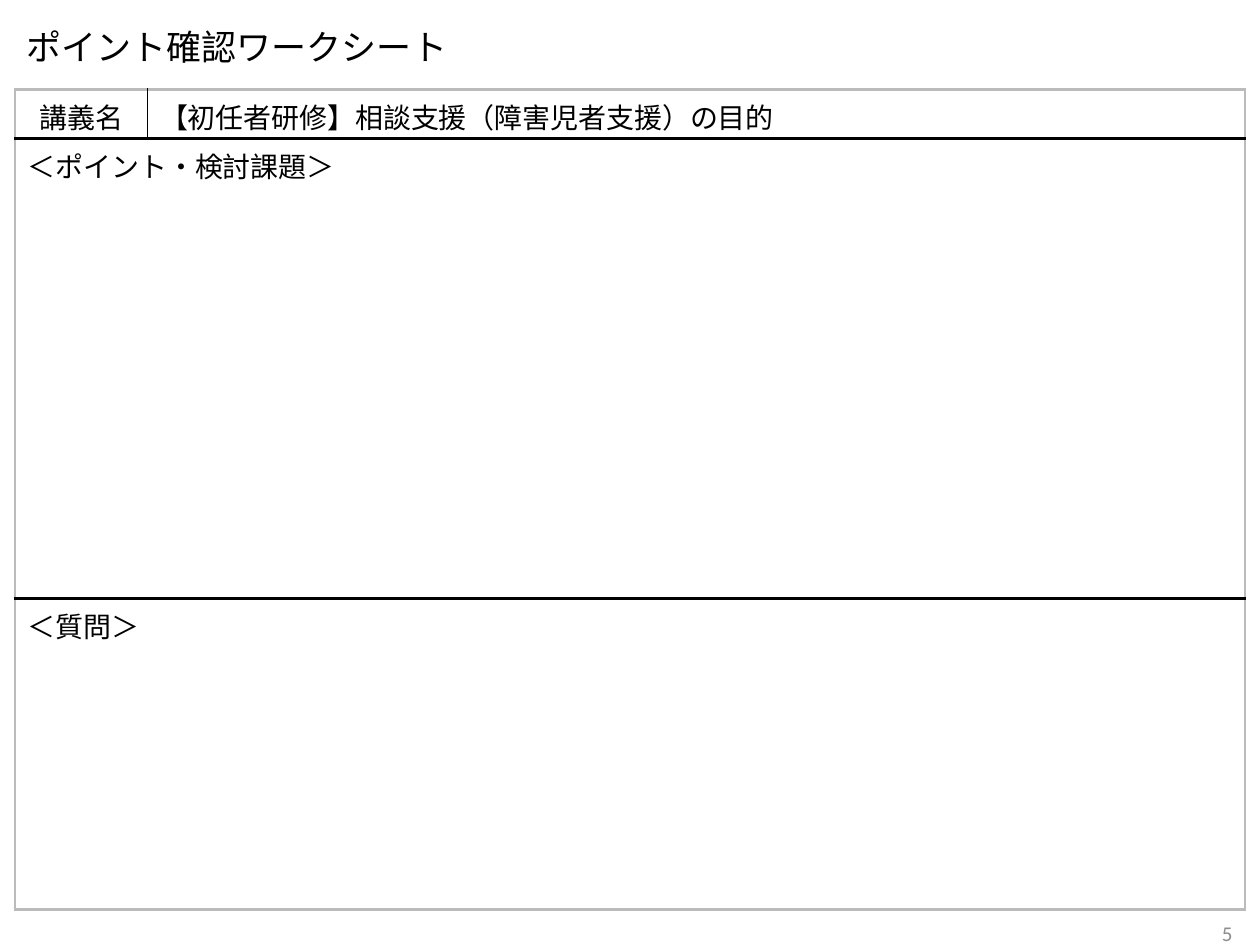
from dataclasses import dataclass

import pptx
import pptx.dml.color
import pptx.enum.text
import pptx.oxml
import pptx.oxml.ns
import pptx.util
from pptx.util import Inches

COLORS = {"text": "000000", "number": "8C8C8C", "rule": "000000", "frame": "BBBBBB"}
JAPANESE = "Noto Sans CJK JP"
ALIGN = pptx.enum.text.PP_ALIGN
MIDDLE = pptx.enum.text.MSO_ANCHOR.MIDDLE
COLUMN_WIDTHS = (1.05, 8.71)


@dataclass(frozen=True)
class SheetRow:
    height: float
    texts: tuple[str, ...]


SHEET_ROWS = (
    SheetRow(0.39, ("講義名", "【初任者研修】相談支援（障害児者支援）の目的")),
    SheetRow(3.65, ("＜ポイント・検討課題＞",)),
    SheetRow(2.47, ("＜質問＞",)),
)


def write_text(frame, text: str, *, size: float = 16, font: str = JAPANESE,
               color: str = "text", align=ALIGN.LEFT, line_spacing: float = 1.0) -> None:
    paragraph = frame.paragraphs[0]
    paragraph.alignment = align
    paragraph.line_spacing = line_spacing
    run = paragraph.add_run()
    run.text = text
    run.font.size = pptx.util.Pt(size)
    run.font.bold = False
    run.font.name = font
    run.font.color.rgb = pptx.dml.color.RGBColor.from_string(COLORS[color])
    # East Asian characters take their own typeface element
    latin = run.font._element.find(pptx.oxml.ns.qn("a:latin"))
    latin.addnext(pptx.oxml.parse_xml(
        f'<a:ea {pptx.oxml.ns.nsdecls("a")} typeface="{font}"/>'))


def set_borders(cell, sides: dict[str, tuple[str, float]]) -> None:
    properties = cell._tc.get_or_add_tcPr()
    for index, (side, (color, width)) in enumerate(sides.items()):
        properties.insert(index, pptx.oxml.parse_xml(
            f'<a:ln{side} {pptx.oxml.ns.nsdecls("a")} w="{pptx.util.Pt(width)}">'
            f'<a:solidFill><a:srgbClr val="{COLORS[color]}"/></a:solidFill></a:ln{side}>'))


def add_worksheet(slide) -> None:
    table = slide.shapes.add_table(
        len(SHEET_ROWS), len(COLUMN_WIDTHS), Inches(0.12), Inches(0.71),
        Inches(sum(COLUMN_WIDTHS)), Inches(sum(row.height for row in SHEET_ROWS))).table
    table.first_row = False
    table.horz_banding = False
    for column, width in zip(table.columns, COLUMN_WIDTHS):
        column.width = Inches(width)

    frame, row_rule, column_rule = ("frame", 1.5), ("rule", 1.5), ("rule", 1)
    last_row, last_column = len(SHEET_ROWS) - 1, len(COLUMN_WIDTHS) - 1
    for r, row in enumerate(SHEET_ROWS):
        table.rows[r].height = Inches(row.height)
        if len(row.texts) == 1:
            table.cell(r, 0).merge(table.cell(r, last_column))
        for c, text in enumerate(row.texts):
            is_label = len(row.texts) > 1 and c == 0
            write_text(table.cell(r, c).text_frame, text,
                       align=ALIGN.CENTER if is_label else ALIGN.LEFT)
        for c in range(len(COLUMN_WIDTHS)):
            cell = table.cell(r, c)
            cell.fill.background()
            set_borders(cell, {
                "L": frame if c == 0 else column_rule,
                "R": frame if c == last_column or len(row.texts) == 1 else column_rule,
                "T": frame if r == 0 else row_rule,
                "B": frame if r == last_row else row_rule,
            })


def main() -> None:
    presentation = pptx.Presentation()
    presentation.slide_width, presentation.slide_height = Inches(10), Inches(7.5)
    slide = presentation.slides.add_slide(presentation.slide_layouts[5])

    # Heading
    title = slide.shapes.title
    title.left, title.top = Inches(0.11), Inches(0.2)
    title.width, title.height = Inches(9), Inches(0.38)
    title.text_frame.vertical_anchor = MIDDLE
    write_text(title.text_frame, "ポイント確認ワークシート", size=20, line_spacing=0.9)

    # Page number
    page_number = slide.shapes.add_textbox(
        Inches(7.55), Inches(7.21), Inches(2.33), Inches(0.4)).text_frame
    page_number.word_wrap = True
    page_number.vertical_anchor = MIDDLE
    write_text(page_number, "5", size=12, font="Calibri", color="number", align=ALIGN.RIGHT)

    # Worksheet with lecture name, points and questions
    add_worksheet(slide)
    presentation.save("out.pptx")


if __name__ == "__main__":
    main()
